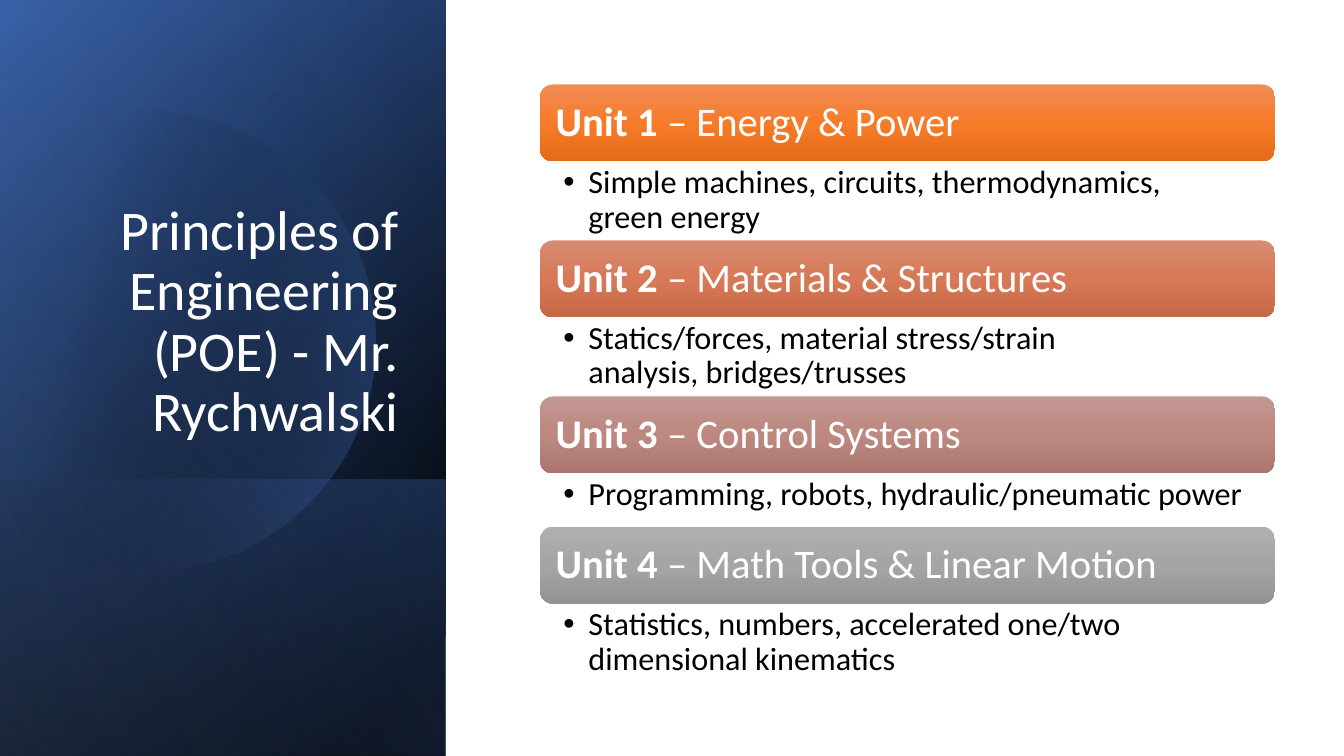
import math

from lxml import etree
from pptx import Presentation
from pptx import util as u
from pptx.dml.color import RGBColor
from pptx.enum import shapes, text
from pptx.oxml.ns import qn

COLORS = {
    "white": "FFFFFF", "black": "000000", "navy": "2F5597",
    "blue": "4472C4", "pale blue": "8FAADC",
}
FONT = "Calibri"


def gradient_fill(shape, stops, angle):
    """Fill with (position %, colour, opacity %) stops; no line, no shadow."""
    shape.shadow.inherit = False
    shape.line.fill.background()
    shape.fill.gradient()
    gradient = shape._element.spPr.find(qn("a:gradFill"))
    gradient.set("rotWithShape", "1")
    for child in list(gradient):
        gradient.remove(child)
    stop_list = etree.SubElement(gradient, qn("a:gsLst"))
    for position, color, opacity in stops:
        stop = etree.SubElement(stop_list, qn("a:gs"), pos=str(position * 1000))
        rgb = etree.SubElement(stop, qn("a:srgbClr"), val=color)
        if opacity < 100:
            etree.SubElement(rgb, qn("a:alpha"), val=str(opacity * 1000))
    etree.SubElement(gradient, qn("a:lin"), ang=str(angle * 60000), scaled="0")


def write_text(shape, runs, size, color, anchor, inset_x, inset_y):
    """Write one paragraph of (text, bold) runs and return it."""
    frame = shape.text_frame
    frame.word_wrap = True
    frame.vertical_anchor = anchor
    frame.margin_left = frame.margin_right = u.Cm(inset_x)
    frame.margin_top = frame.margin_bottom = u.Cm(inset_y)
    paragraph = frame.paragraphs[0]
    paragraph.alignment = text.PP_ALIGN.LEFT
    paragraph.line_spacing = 0.9
    for words, bold in runs:
        run = paragraph.add_run()
        run.text = words
        run.font.name = FONT
        run.font.size = u.Pt(size)
        run.font.bold = bold
        run.font.color.rgb = RGBColor.from_string(COLORS[color])
    return paragraph


presentation = Presentation()
presentation.slide_width = u.Cm(33.87)
presentation.slide_height = u.Cm(19.05)
slide = presentation.slides.add_slide(presentation.slide_layouts[6])

# Left panel: rectangles turned by 90 degrees, with a faint disc among them
PANEL_WIDTH, PANEL_HEIGHT = 11.23, 19.05
black, blue = COLORS["black"], COLORS["blue"]
panel_layers = [
    (PANEL_HEIGHT, [(8, black, 100), (100, COLORS["navy"], 100)], 50),
    (PANEL_HEIGHT, [(0, black, 0), (99, blue, 46)], 30),
    (6.96, [(2, blue, 29), (100, black, 30)], 130),
    ("disc", [(29, black, 0), (100, blue, 43)], 14),
    (PANEL_HEIGHT, [(0, black, 0), (99, COLORS["pale blue"], 11)], 120),
]
DISC_X, DISC_Y, DISC_RADIUS, DISC_HALF_ARC = 3.68, 8.58, 5.79, 134.6
STEPS = 120
for height, stops, angle in panel_layers:
    if height == "disc":
        points = []
        for step in range(STEPS + 1):
            turn = math.radians(DISC_HALF_ARC * (2 * step / STEPS - 1))
            points.append((u.Cm(DISC_X + DISC_RADIUS * math.cos(turn)),
                           u.Cm(DISC_Y + DISC_RADIUS * math.sin(turn))))
        builder = slide.shapes.build_freeform(*points[0])
        builder.add_line_segments(points[1:], close=True)
        layer = builder.convert_to_shape()
    else:
        center_y = PANEL_HEIGHT - height / 2
        layer = slide.shapes.add_shape(
            shapes.MSO_SHAPE.RECTANGLE,
            u.Cm((PANEL_WIDTH - height) / 2), u.Cm(center_y - PANEL_WIDTH / 2),
            u.Cm(height), u.Cm(PANEL_WIDTH))
        layer.rotation = 90
        layer._element.spPr.find(qn("a:xfrm")).set("flipH", "1")
    gradient_fill(layer, stops, angle)

title = slide.shapes.add_textbox(u.Cm(1.63), u.Cm(4.67), u.Cm(8.66), u.Cm(6.65))
paragraph = write_text(
    title, [("Principles of Engineering (POE) - Mr. Rychwalski", False)],
    40, "white", text.MSO_ANCHOR.BOTTOM, 0.25, 0.13)
paragraph.alignment = text.PP_ALIGN.RIGHT

# Units: a coloured bar with a bulleted line below each
units = [
    ("Energy & Power",
     "Simple machines, circuits, thermodynamics, green\u00a0energy",
     1.99, ("F18C57", "F67B28", "E56C19")),
    ("Materials & Structures",
     "Statics/forces, material stress/strain analysis,\u00a0bridges/trusses",
     1.99, ("D78B72", "D77956", "C66846")),
    ("Control Systems",
     "Programming, robots, hydraulic/pneumatic power",
     1.34, ("C19791", "BC8880", "AA766E")),
    ("Math Tools & Linear Motion",
     "Statistics, numbers, accelerated one/two dimensional\u00a0kinematics",
     1.99, ("AFAFAF", "A5A5A5", "939393")),
]
LEFT, WIDTH, BAR_HEIGHT = u.Cm(13.61), u.Cm(18.52), 1.94
top = 2.13
for number, (name, topics, topics_height, bar_colors) in enumerate(units, 1):
    bar = slide.shapes.add_shape(shapes.MSO_SHAPE.ROUNDED_RECTANGLE,
                                 LEFT, u.Cm(top), WIDTH, u.Cm(BAR_HEIGHT))
    gradient_fill(bar, [(position, color, 100) for position, color
                        in zip((0, 50, 100), bar_colors)], 90)
    write_text(bar, [(f"Unit {number}\u00a0", True), (f"– {name}", False)],
               29, "white", text.MSO_ANCHOR.MIDDLE, 0.3, 0.3)
    top += BAR_HEIGHT

    box = slide.shapes.add_textbox(LEFT, u.Cm(top), WIDTH, u.Cm(topics_height))
    paragraph = write_text(box, [(topics, False)], 23, "black",
                           text.MSO_ANCHOR.TOP, 0.59, 0.1)
    properties = paragraph._p.get_or_add_pPr()
    properties.set("marL", str(u.Cm(0.63)))
    properties.set("indent", str(u.Cm(-0.63)))
    etree.SubElement(properties, qn("a:buFont"), typeface="Arial")
    etree.SubElement(properties, qn("a:buChar"), char="•")
    top += topics_height

presentation.save("out.pptx")
